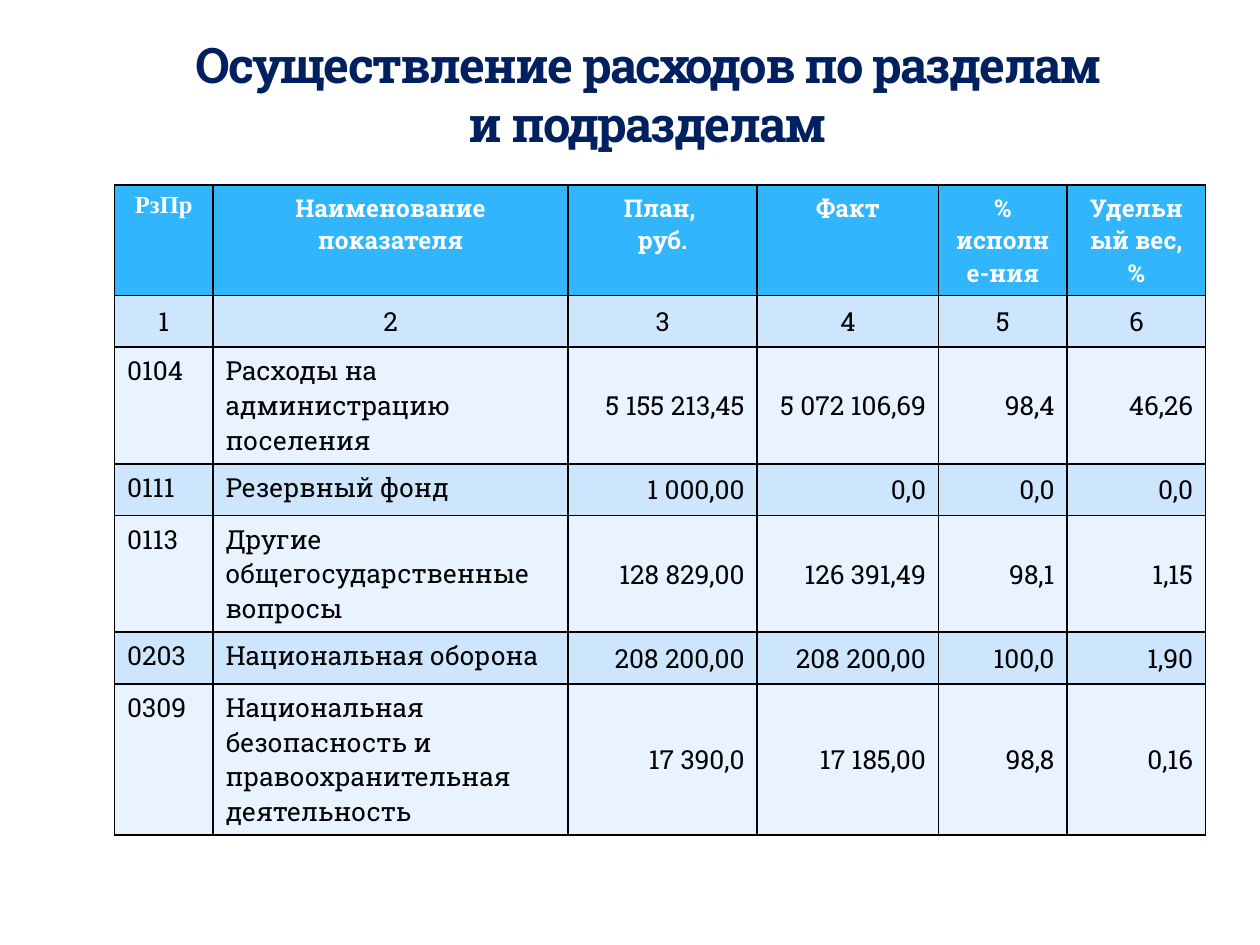
from lxml import etree
from pptx import Presentation
from pptx import util as u
from pptx.dml.color import RGBColor
from pptx.enum import text
from pptx.oxml import parse_xml

NS = "http://schemas.openxmlformats.org/drawingml/2006/main"
HUES = {"navy": "002060", "head": "31B6FD", "dark": "CEE5FE",
        "pale": "E8F3FF", "white": "FFFFFF", "black": "000000",
        "edge": "AFCCDE"}
COLS = [0.78, 2.82, 1.5, 1.44, 1.02, 1.1]
ROWS = [0.87] + [0.41] * 6
CELLS = [
    ["РзПр", "Наименование показателя", "План, \nруб.", "Факт",
     "% исполне-ния", "Удельный вес, %"],
    ["1", "2", "3", "4", "5", "6"],
    ["0104", "Расходы на администрацию поселения",
     "5 155 213,45", "5 072 106,69", "98,4", "46,26"],
    ["0111", "Резервный фонд", "1 000,00", "0,0", "0,0", "0,0"],
    ["0113", "Другие общегосударственные вопросы",
     "128 829,00", "126 391,49", "98,1", "1,15"],
    ["0203", "Национальная оборона",
     "208 200,00", "208 200,00", "100,0", "1,90"],
    ["0309", "Национальная безопасность и правоохранительная деятельность",
     "17 390,0", "17 185,00", "98,8", "0,16"],
]


class Deck:
    face = "Roboto Slab"
    align = text.PP_ALIGN
    anchor = text.MSO_ANCHOR

    def __init__(self):
        self.prs = Presentation()
        self.prs.slide_width = u.Inches(10)
        self.prs.slide_height = u.Inches(7.5)
        self.slide = self.prs.slides.add_slide(self.prs.slide_layouts[5])

    def line(self, tag, width, hue, alpha=100):
        return parse_xml(
            f'<a:{tag} xmlns:a="{NS}" w="{int(u.Pt(width))}"><a:solidFill>'
            f'<a:srgbClr val="{HUES[hue]}"><a:alpha val="{alpha * 1000}"/>'
            f'</a:srgbClr></a:solidFill></a:{tag}>')

    def style(self, para, size, hue, bold, align, face=None):
        para.alignment = align
        font = para.font
        font.name = face or self.face
        font.size = u.Pt(size)
        font.bold = bold
        font.color.rgb = RGBColor.from_string(HUES[hue])

    def title(self, words, box):
        shape = self.slide.shapes.title
        shape.left, shape.top, shape.width, shape.height = map(u.Inches, box)
        frame = shape.text_frame
        frame.text = words
        frame.word_wrap = True
        frame.auto_size = text.MSO_AUTO_SIZE.NONE
        frame.vertical_anchor = self.anchor.BOTTOM
        para = frame.paragraphs[0]
        self.style(para, 28, "navy", True, self.align.CENTER)
        props = para.runs[0]._r.get_or_add_rPr()
        props.set("spc", "-100")
        props.insert(0, self.line("ln", 0.25, "edge", 25))

    def cell(self, cell, words, row, col):
        head, mid = row == 0, row == 1
        cell.text = words
        fill = "head" if head else "dark" if row % 2 else "pale"
        cell.fill.solid()
        cell.fill.fore_color.rgb = RGBColor.from_string(HUES[fill])
        if mid or (not head and col > 1):
            cell.vertical_anchor = self.anchor.MIDDLE
        if head or mid:
            align = self.align.CENTER
        else:
            align = self.align.RIGHT if col > 1 else self.align.LEFT
        face = "Times New Roman" if head and col == 0 else self.face
        for para in cell.text_frame.paragraphs:
            self.style(para, 14 if head else 15, "white" if head else "black",
                       head, align, face)
        props = cell._tc.get_or_add_tcPr()
        for spot, tag in enumerate(("lnL", "lnR", "lnT", "lnB")):
            props.insert(spot, self.line(tag, 1, "black"))

    def table(self, rows, left, top, wide, high):
        frame = self.slide.shapes.add_table(
            len(high), len(wide), u.Inches(left), u.Inches(top),
            u.Inches(sum(wide)), u.Inches(sum(high)))
        grid = frame.table
        for col, size in zip(grid.columns, wide):
            col.width = u.Inches(size)
        for row, size in zip(grid.rows, high):
            row.height = u.Inches(size)
        for r, line in enumerate(rows):
            for c, words in enumerate(line):
                self.cell(grid.cell(r, c), words, r, c)


def main():
    deck = Deck()
    deck.table(CELLS, 0.91, 1.47, COLS, ROWS)
    deck.title("Осуществление расходов по разделам и подразделам",
               (1.3, 0.76, 7.68, 0.5))
    deck.prs.save("out.pptx")


if __name__ == "__main__":
    main()
